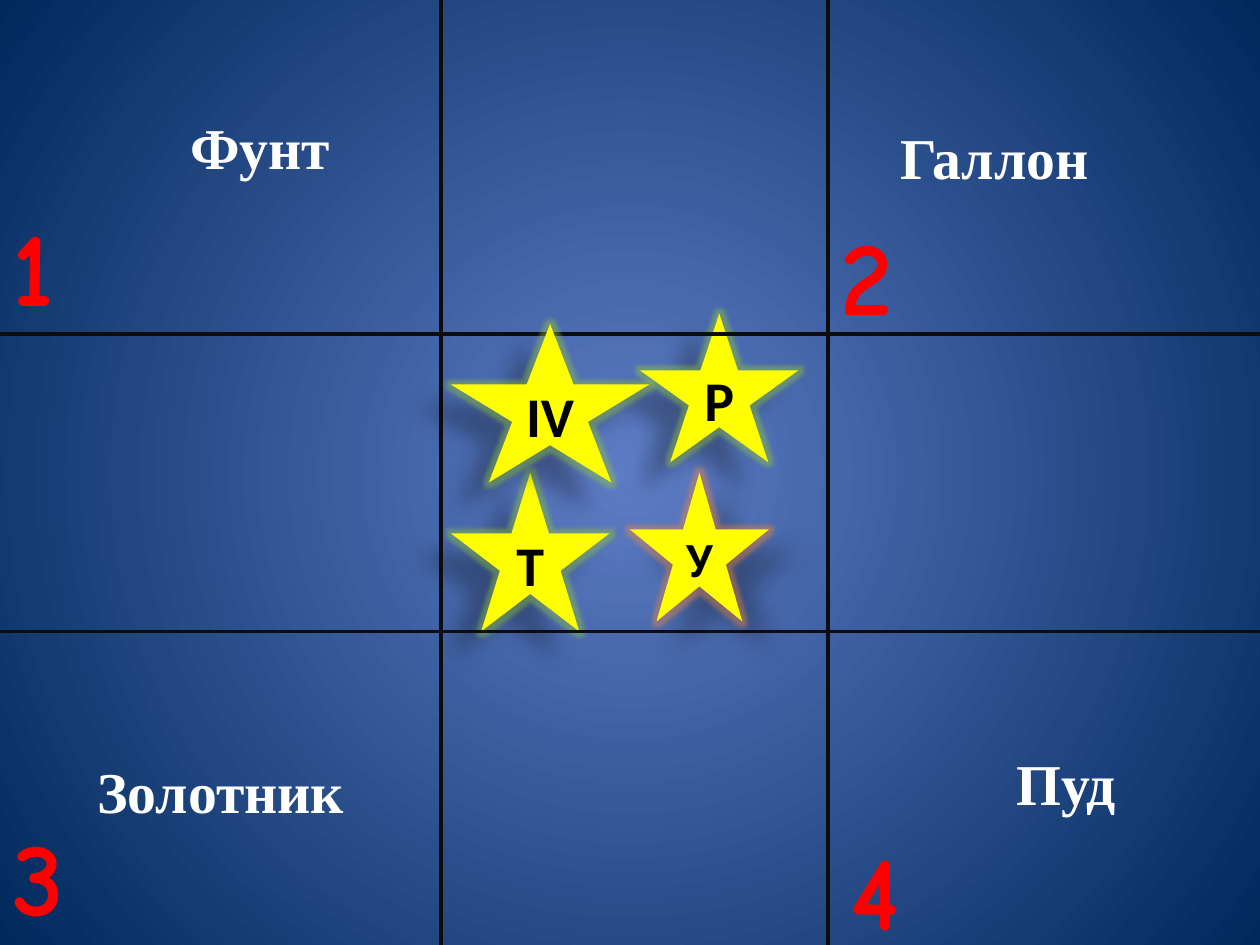
from lxml.etree import SubElement
from pptx import Presentation
from pptx.dml.color import RGBColor
from pptx.enum.shapes import MSO_CONNECTOR as Connector, MSO_SHAPE as Shape
from pptx.enum.text import MSO_ANCHOR as Anchor, MSO_AUTO_SIZE as AutoSize, PP_ALIGN as Align
from pptx.oxml.ns import qn
from pptx.util import Cm, Pt

WIDTH, HEIGHT = 25.4, 19.05
COLUMN_LINES = (8.89, 16.69)
ROW_LINES = (6.73, 12.73)

WORD = dict(name="Times New Roman", size=Pt(33), bold=True)
NUMBER = dict(name="Comic Neue", size=Pt(60), bold=True)
LETTER = dict(name="Calibri", size=Pt(32), bold=True)

GREEN_GLOW = dict(glow="9BD030", blur=11.8, distance=19.7, angle=141, opacity=28)
ORANGE_GLOW = dict(glow="FF8A35", blur=15, distance=18, angle=45, opacity=30)


def color(hex_value):
    return RGBColor.from_string(hex_value)


def lengths(*values):
    return [Cm(value) for value in values]


def write(frame, text, formats, hex_value, align):
    paragraph = frame.paragraphs[0]
    paragraph.alignment = align
    run = paragraph.add_run()
    run.text = text
    for key, value in formats.items():
        setattr(run.font, key, value)
    run.font.color.rgb = color(hex_value)


def add_color(parent, hex_value, opacity):
    tint = SubElement(parent, qn("a:srgbClr"), val=hex_value)
    SubElement(tint, qn("a:alpha"), val=str(opacity * 1000))


def paint_background(slide):
    fill = slide.background.fill
    fill.gradient()
    for stop, (position, hex_value) in zip(fill.gradient_stops, ((0, "5E7CC5"), (1, "00295C"))):
        stop.position = position
        stop.color.rgb = color(hex_value)
    gradient = slide.background._cSld.find(".//" + qn("a:gradFill"))
    linear = gradient.find(qn("a:lin"))
    circle = SubElement(gradient, qn("a:path"), path="circle")
    gradient.replace(linear, circle)
    SubElement(circle, qn("a:fillToRect"), l="50000", t="50000", r="50000", b="50000")


def add_star(slide, letter, box, style, size=32):
    star = slide.shapes.add_shape(Shape.STAR_5_POINT, *lengths(*box))
    star.fill.solid()
    star.fill.fore_color.rgb = color("FFFF00")
    star.line.fill.background()
    star.shadow.inherit = False
    effects = star._element.spPr.find(qn("a:effectLst"))
    glow = SubElement(effects, qn("a:glow"), rad=str(Pt(5)))
    add_color(glow, style["glow"], 40)
    shadow = SubElement(
        effects, qn("a:outerShdw"), blurRad=str(Pt(style["blur"])),
        dist=str(Pt(style["distance"])), dir=str(style["angle"] * 60000), rotWithShape="0")
    add_color(shadow, "000000", style["opacity"])
    frame = star.text_frame
    for key, value in dict(word_wrap=False, vertical_anchor=Anchor.MIDDLE).items():
        setattr(frame, key, value)
    write(frame, letter, LETTER | dict(size=Pt(size)), "000000", Align.CENTER)


def add_grid(slide, width, height):
    verticals = [(x, 0, x, height) for x in COLUMN_LINES]
    horizontals = [(0, y, width, y) for y in ROW_LINES]
    for ends in verticals + horizontals:
        line = slide.shapes.add_connector(Connector.STRAIGHT, *lengths(*ends))
        line.line.color.rgb = color("0D0D0D")
        line.line.width = Pt(2.25)
        SubElement(line._element.spPr, qn("a:effectLst"))


def add_label(group, text, box, formats, hex_value, align):
    label = group.shapes.add_textbox(*lengths(*box))
    frame = label.text_frame
    for key, value in dict(word_wrap=True, auto_size=AutoSize.SHAPE_TO_FIT_TEXT).items():
        setattr(frame, key, value)
    write(frame, text, formats, hex_value, align)


def add_measure(slide, number, word, corner, indent, word_width, drop, align=Align.CENTER):
    left, top = corner
    group = slide.shapes.add_group_shape()
    add_label(group, word, (left + indent, top, word_width, 1.7), WORD, "FFFFFF", align)
    add_label(group, number, (left, top + drop, 2.7, 2.82), NUMBER, "FF0000", Align.LEFT)


def main():
    deck = Presentation()
    deck.slide_width, deck.slide_height = lengths(WIDTH, HEIGHT)
    slide = deck.slides.add_slide(deck.slide_layouts[6])
    paint_background(slide)

    add_star(slide, "Т", (9.09, 9.53, 3.2, 3.2), GREEN_GLOW)
    add_star(slide, "Р", (12.9, 6.32, 3.2, 3), GREEN_GLOW)
    add_star(slide, "У", (12.7, 9.53, 2.8, 3), ORANGE_GLOW, size=28)
    add_grid(slide, WIDTH, HEIGHT)
    add_star(slide, "IV", (9.09, 6.53, 4, 3.2), GREEN_GLOW)

    add_measure(slide, "1", "Фунт", (0, 2.13), 0, 10.49, 1.8)
    add_measure(slide, "2", "Галлон", (16.69, 2.34), 1.22, 6.8, 1.78, Align.LEFT)
    add_measure(slide, "3", "Золотник", (0, 15.11), 1.5, 5.9, 1.12)
    add_measure(slide, "4", "Пуд", (16.89, 14.94), 2.21, 4.8, 1.57)
    deck.save("out.pptx")


if __name__ == "__main__":
    main()
